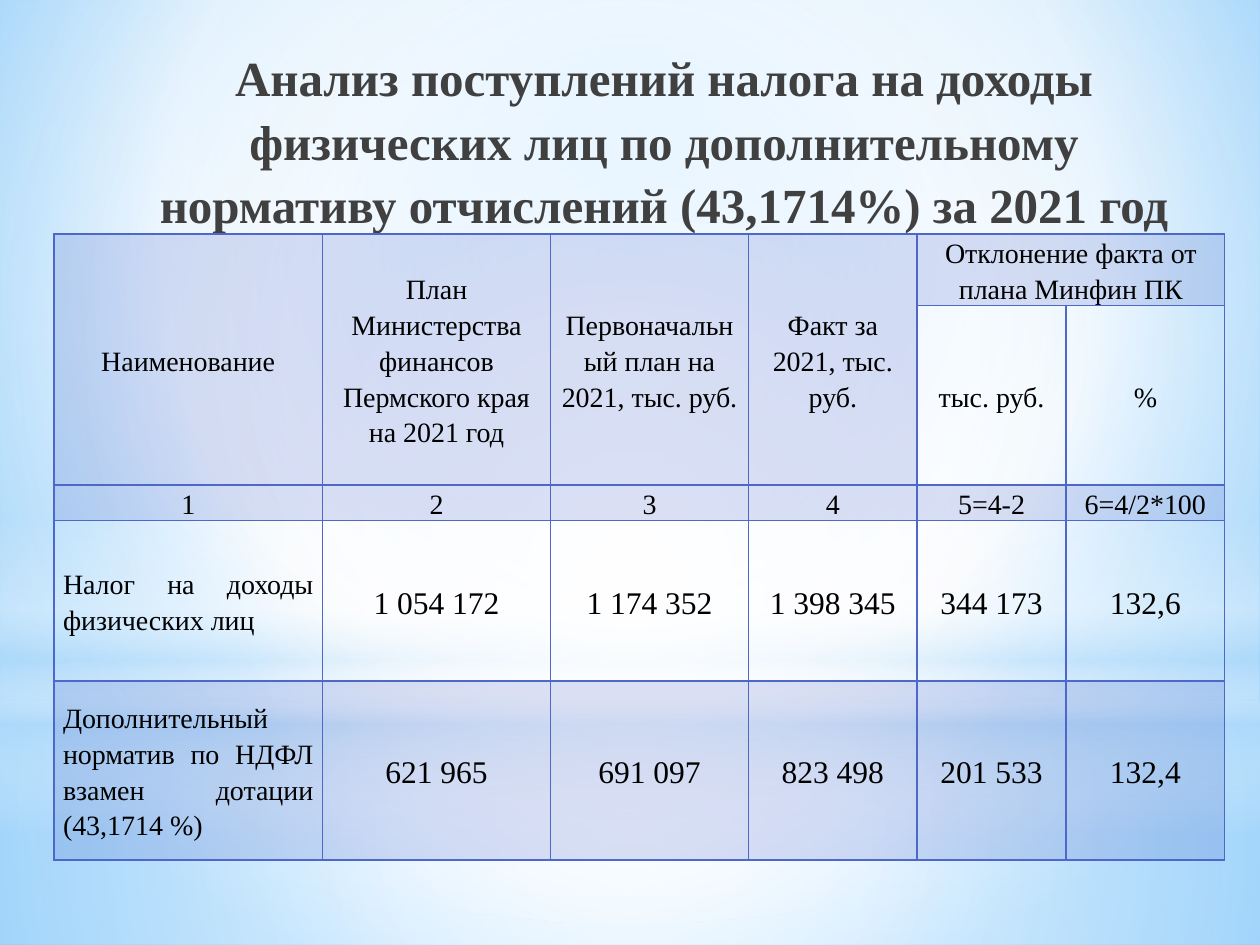
import pptx
import pptx.util
import pptx.dml.color
import pptx.enum.shapes
import pptx.enum.text
import pptx.oxml
import pptx.oxml.ns
from pptx.util import Cm

qn = pptx.oxml.ns.qn
ALIGN = pptx.enum.text.PP_ALIGN
ANCHOR = pptx.enum.text.MSO_ANCHOR
SHAPE = pptx.enum.shapes.MSO_SHAPE
FONT = "Times New Roman"
BLUE = "4E67C8"

# Content
TITLE = ("Анализ поступлений налога на доходы физических лиц "
         "по дополнительному нормативу отчислений (43,1714%) за 2021 год")
ROWS = [
    ["Наименование", "План Министерства финансов Пермского края на 2021 год",
     "Первоначальный план на 2021, тыс. руб.", "Факт за 2021, тыс. руб.",
     "Отклонение факта от плана Минфин ПК", ""],
    ["", "", "", "", "тыс. руб.", "%"],
    ["1", "2", "3", "4", "5=4-2", "6=4/2*100"],
    ["Налог на доходы физических лиц",
     "1 054 172", "1 174 352", "1 398 345", "344 173", "132,6"],
    ["Дополнительный норматив по НДФЛ взамен дотации (43,1714 %)",
     "621 965", "691 097", "823 498", "201 533", "132,4"],
]
WIDTHS = [5.41, 4.6, 3.99, 3.4, 3.0, 3.2]
HEIGHTS = [1.43, 3.61, 0.71, 3.23, 3.61]
MERGES = [((0, col), (1, col)) for col in range(4)] + [((0, 4), (0, 5))]
SHADED = {0, 2, 4}

# Backdrop: gradient stops are (place, colour, opacity), in per cent
MID = (50, 50, 50, 50)
PAGE = [(0, "9ED5FF", 100), (60, "FFFFFF", 100), (100, "5BB9FF", 100)]
LAYERS = [
    (SHAPE.RECTANGLE, 14.17, 4.88, MID,
     [(0, "FFFFFF", 91), (37, "FFFFFF", 76), (100, "B4DCFA", 79)]),
    (SHAPE.RECTANGLE, 0, 14.17, MID,
     [(0, "FFFFFF", 89), (48, "FFFFFF", 62), (100, "B4DCFA", 79)]),
    (SHAPE.RECTANGLE, 10.46, 6.35, None,
     [(0, "FFFFFF", 0), (29, "FFFFFF", 30), (45, "B4DCFA", 40),
      (55, "FFFFFF", 26), (65, "B4DCFA", 60), (100, "FFFFFF", 0)]),
    (SHAPE.OVAL, 4.45, 14.17, MID, [(0, "FFFFFF", 100), (56, "FFFFFF", 0)]),
]


def paint(color, code):
    color.rgb = pptx.dml.color.RGBColor.from_string(code)


def blend(props, stops, focus):
    """Swap the solid fill in props for a gradient."""
    marks = "".join(
        f'<a:gs pos="{place * 1000}"><a:srgbClr val="{code}">'
        f'<a:alpha val="{alpha * 1000}"/></a:srgbClr></a:gs>'
        for place, code, alpha in stops)
    if focus:
        edges = " ".join(f'{side}="{part * 1000}"'
                         for side, part in zip("ltrb", focus))
        way = f'<a:path path="circle"><a:fillToRect {edges}/></a:path>'
    else:
        way = '<a:lin ang="5400000" scaled="0"/>'
    grad = pptx.oxml.parse_xml(
        f'<a:gradFill {pptx.oxml.ns.nsdecls("a")} rotWithShape="1">'
        f'<a:gsLst>{marks}</a:gsLst>{way}</a:gradFill>')
    props.replace(props.find(qn("a:solidFill")), grad)


def write(frame, text, size, code, bold, align, space):
    para = frame.paragraphs[0]
    para.alignment = align
    para.line_spacing = space
    run = para.add_run()
    run.text = text
    run.font.name = FONT
    run.font.size = pptx.util.Pt(size)
    run.font.bold = bold
    paint(run.font.color, code)


def border(cell):
    props = cell._tc.get_or_add_tcPr()
    for spot, side in enumerate("LRTB"):
        props.insert(spot, pptx.oxml.parse_xml(
            f'<a:ln{side} {pptx.oxml.ns.nsdecls("a")} w="12700"><a:solidFill>'
            f'<a:srgbClr val="{BLUE}"/></a:solidFill></a:ln{side}>'))


def shade(cell):
    cell.fill.solid()
    paint(cell.fill.fore_color, BLUE)
    tint = cell._tc.tcPr.find(qn("a:solidFill"))[0]
    tint.append(pptx.oxml.parse_xml(
        f'<a:alpha {pptx.oxml.ns.nsdecls("a")} val="20000"/>'))


def backdrop(slide, width):
    fill = slide.background.fill
    fill.solid()
    paint(fill.fore_color, "FFFFFF")
    blend(slide.element.find(".//" + qn("p:bgPr")), PAGE, (20, 10, 20, 60))
    for kind, top, height, focus, stops in LAYERS:
        shape = slide.shapes.add_shape(kind, 0, Cm(top), width, Cm(height))
        shape.shadow.inherit = False
        shape.line.fill.background()
        shape.fill.solid()
        paint(shape.fill.fore_color, "FFFFFF")
        blend(shape.element.spPr, stops, focus)


def heading(slide):
    title = slide.shapes.title
    title.left, title.top = Cm(2.49), Cm(0.74)
    title.width, title.height = Cm(21.79), Cm(3.81)
    frame = title.text_frame
    frame.word_wrap = True
    frame.auto_size = pptx.enum.text.MSO_AUTO_SIZE.NONE
    frame.vertical_anchor = ANCHOR.TOP
    write(frame, TITLE, 28, "404040", True, ALIGN.CENTER, 1.08)
    # Bring the title in front of the backdrop
    slide.shapes.element.append(title.element)


def grid(slide):
    table = slide.shapes.add_table(
        len(ROWS), len(WIDTHS), Cm(1.09), Cm(4.72),
        Cm(sum(WIDTHS)), Cm(sum(HEIGHTS))).table
    table.first_row = table.horz_banding = False
    for col, width in zip(table.columns, WIDTHS):
        col.width = Cm(width)
    for row, height in zip(table.rows, HEIGHTS):
        row.height = Cm(height)
    for start, end in MERGES:
        table.cell(*start).merge(table.cell(*end))
    for r, texts in enumerate(ROWS):
        for c, text in enumerate(texts):
            cell = table.cell(r, c)
            cell.vertical_anchor = ANCHOR.MIDDLE
            cell.margin_left = cell.margin_right = Cm(0.18)
            cell.margin_top = cell.margin_bottom = 0
            if r in SHADED or (r == 1 and c < 4):
                shade(cell)
            else:
                cell.fill.background()
            border(cell)
            if text:
                size = 18 if r > 2 and c else 16
                align = ALIGN.JUSTIFY if r > 2 and not c else ALIGN.CENTER
                write(cell.text_frame, text, size, "000000", False, align, 1.15)


def main():
    deck = pptx.Presentation()
    deck.slide_width, deck.slide_height = Cm(25.4), Cm(19.05)
    slide = deck.slides.add_slide(deck.slide_layouts[5])
    backdrop(slide, deck.slide_width)
    heading(slide)
    grid(slide)
    deck.save("out.pptx")


if __name__ == "__main__":
    main()
